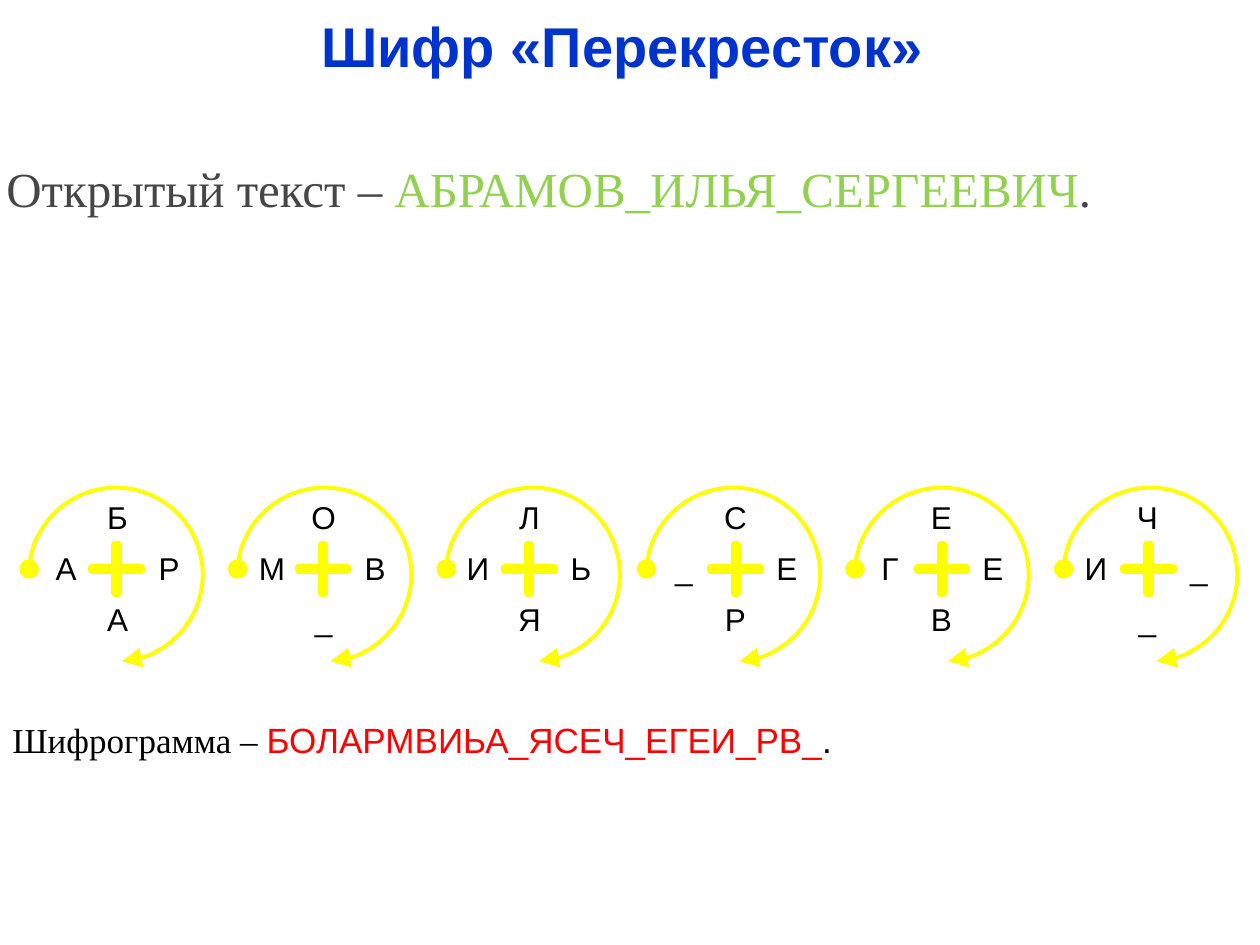
from lxml.etree import SubElement as Sub
from pptx import Presentation
from pptx.dml.color import RGBColor as Rgb
from pptx.enum.shapes import MSO_SHAPE as Kind
from pptx.enum.text import MSO_ANCHOR as Anchor, MSO_AUTO_SIZE as Auto, PP_ALIGN as Align
from pptx.oxml import parse_xml
from pptx.oxml.ns import nsdecls, qn
from pptx.util import Inches, Pt

SANS, SERIF = "Arial", "Times New Roman"
BLUE, GREY, GREEN, RED = "0033CC", "464646", "92D050", "FF0000"
BLACK, WHITE, YELLOW = "000000", "FFFFFF", "FFFF00"
PLAIN = "АБРАМОВ_ИЛЬЯ_СЕРГЕЕВИЧ"
CIPHER = "БОЛАРМВИЬА_ЯСЕЧ_ЕГЕИ_РВ_"
SPOTS = [(1, 0), (0, 1), (1, 2), (2, 1)]
SHADE = ('<a:effectLst %s><a:outerShdw blurRad="38100" dist="38100" dir="2700000">'
         '<a:srgbClr val="000000"><a:alpha val="43137"/></a:srgbClr>'
         '</a:outerShdw></a:effectLst>' % nsdecls("a"))


def tint(code):
    return Rgb.from_string(code)


class Deck:
    cols, rows = 100, 75

    def __init__(self):
        self.show = Presentation()
        self.show.slide_width, self.show.slide_height = Inches(10), Inches(7.5)
        self.page = self.show.slides.add_slide(self.show.slide_layouts[0])

    def grid(self, x, y, w, h):
        wide = self.show.slide_width / self.cols
        high = self.show.slide_height / self.rows
        return [round(n * unit) for n, unit in zip((x, y, w, h), (wide, high) * 2)]

    def ink(self, para, text, size, face, code, bold=False):
        run = para.add_run()
        run.text = text
        font = run.font
        font.size, font.name, font.bold = Pt(size), face, bold
        font.color.rgb = tint(code)
        return run

    def fit(self, shape, runs, box, align, inset):
        shape.left, shape.top, shape.width, shape.height = self.grid(*box)
        frame = shape.text_frame
        frame.word_wrap, frame.auto_size = True, Auto.NONE
        frame.vertical_anchor = Anchor.TOP
        left, top = inset
        frame.margin_left = frame.margin_right = Inches(left)
        frame.margin_top = Inches(top)
        para = frame.paragraphs[0]
        para.alignment, para.space_before = align, Pt(0)
        return [self.ink(para, *run) for run in runs]

    def title(self, text, box):
        runs = [(text, 32, SANS, BLUE, True)]
        run, = self.fit(self.page.shapes.title, runs, box, Align.CENTER, (0.1, 0.09))
        run._r.rPr.find(qn("a:solidFill")).addnext(parse_xml(SHADE))

    def body(self, runs, box):
        self.fit(self.page.placeholders[1], runs, box, Align.JUSTIFY, (0.05, 0.42))

    def note(self, runs, box):
        shape = self.page.shapes.add_textbox(*self.grid(*box))
        self.fit(shape, runs, box, Align.JUSTIFY, (0.1, 0.06))

    def table(self, marks, rows, cols, box):
        table = self.page.shapes.add_table(rows, cols, *self.grid(*box)).table
        table.first_row = table.horz_banding = False
        for cell in table.iter_cells():
            cell.fill.background()
            cell.margin_left = cell.margin_right = 0
            cell.margin_top = cell.margin_bottom = 0
            cell.vertical_anchor = Anchor.MIDDLE
        for (row, col), mark in marks.items():
            para = table.cell(row, col).text_frame.paragraphs[0]
            para.alignment = Align.CENTER
            self.ink(para, mark, 18, SANS, BLACK)

    def shape(self, kind, box, turns, width):
        shape = self.page.shapes.add_shape(kind, *self.grid(*box))
        shape.shadow.inherit = False
        for i, turn in enumerate(turns):
            shape.adjustments[i] = turn
        shape.line.color.rgb = tint(YELLOW)
        shape.line.width = Pt(width)
        line = shape._element.spPr.find(qn("a:ln"))
        Sub(line, qn("a:round"))
        return shape, line

    def plus(self, box):
        shape, line = self.shape(Kind.CROSS, box, [0.473], 4.33)
        shape.fill.solid()
        shape.fill.fore_color.rgb = tint(WHITE)

    def arc(self, box):
        shape, line = self.shape(Kind.ARC, box, [110.224, 51.538], 2.25)
        shape.fill.background()
        for tag, tip in (("a:headEnd", "oval"), ("a:tailEnd", "triangle")):
            Sub(line, qn(tag), type=tip, w="lg", len="lg")


def main():
    deck = Deck()
    deck.title("Шифр «Перекресток» ", (0, 0, 100, 9.1))
    deck.body([("Открытый текст – ", 28, SERIF, GREY),
               (PLAIN, 28, SERIF, GREEN),
               (".", 28, SERIF, GREY)], (0, 8.4, 100, 30.7))
    deck.note([("Шифрограмма – ", 20, SERIF, BLACK),
               (CIPHER, 20, SANS, RED),
               (".", 20, SANS, BLACK)], (0, 56.4, 100, 16.5))
    marks = {}
    for i, mark in enumerate(PLAIN.ljust(24, "_")):
        row, col = SPOTS[i % 4]
        marks[row, col + i // 4 * 4] = mark
    deck.table(marks, 3, 23, (3.2, 39.1, 94, 12.2))
    for i in range(6):
        deck.plus((7.3 + 16.38 * i, 43.2, 3.9, 3.9))
    for start in (2.3, 51.3):
        for i in range(3):
            deck.arc((start + 16.55 * i, 38.7, 13.8, 13.8))
    deck.show.save("out.pptx")


if __name__ == "__main__":
    main()
